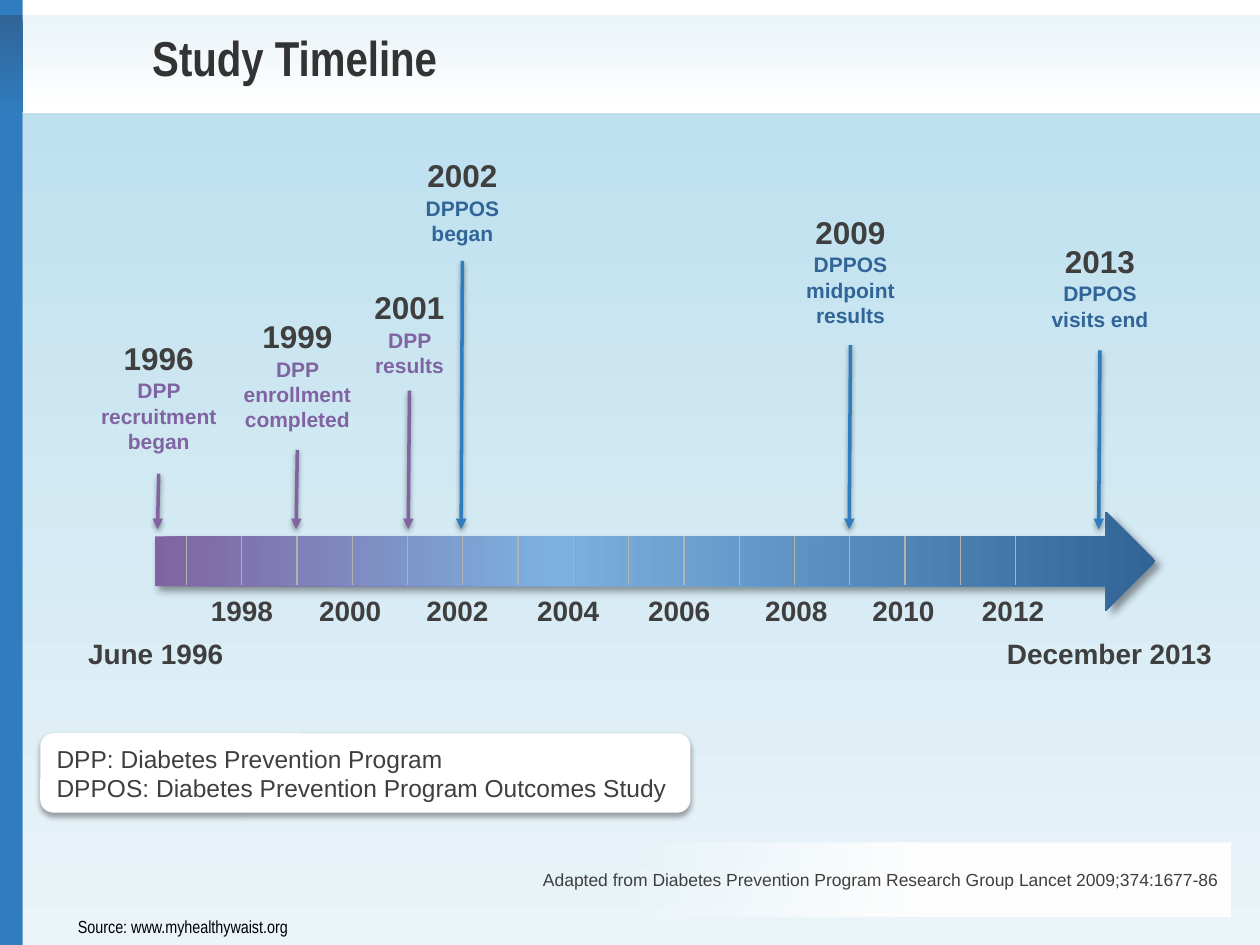
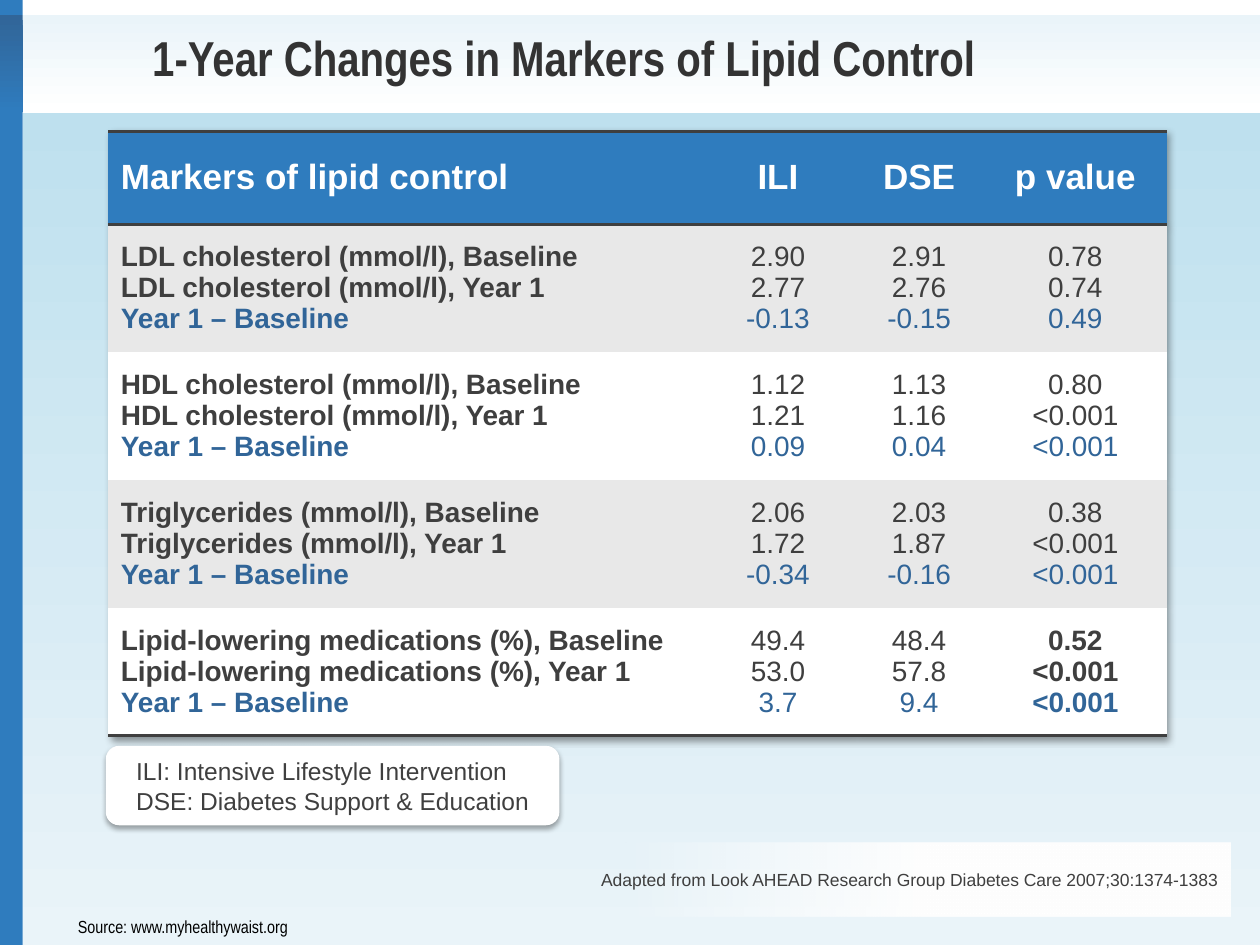
from lxml.etree import SubElement as Sub
from pptx import Presentation
from pptx.dml.color import RGBColor as RGB
from pptx.enum.shapes import MSO_CONNECTOR as LINK, MSO_SHAPE as FORM
from pptx.enum.text import MSO_ANCHOR as ANCHOR, PP_ALIGN as ALIGN
from pptx.oxml.ns import qn
from pptx.util import Inches, Pt

HUES = {
    "blue": "2F7CBE", "navy": "316598", "sky": "7CB1DF", "purple": "8064A2",
    "ice": "EAF4F9", "pale": "BEE0EE", "white": "FFFFFF", "black": "000000",
    "title": "333333", "text": "3F3F3F", "tick": "B2B2B2", "band": "E8E8E8",
}
SANS, SLIM = "Arial", "Arial Narrow"
LEFT, MID, RIGHT = ALIGN.LEFT, ALIGN.CENTER, ALIGN.RIGHT
PLAIN_STYLE = "{2D5ABB26-0587-4C30-8999-92F81FD0307C}"

# Shadows: opacity in percent, blur and distance in points, angle in degrees
BAR_SHADE = (40, 4, 3, 45)
PIN_SHADE = (38, 3.1, 1.6, 90)
KEY_SHADE = (35, 3.1, 1.8, 90)

BAR_TOP, BAR_HIGH = 4.06, 0.79
YEARS = range(1998, 2014, 2)
YEAR_LEFTS = (1.57, 2.43, 3.28, 4.16, 5.04, 5.97, 6.82, 7.69)
TICKS, TICK_FROM, TICK_TO = 16, 1.48, 8.06

# Centre, top, year, note, note width, top of the pin, note hue, pin hue
EVENTS = [
    (1.26, 2.64, "1996", "DPP recruitment began", 1.15, 3.76, "purple", "purple"),
    (2.36, 2.47, "1999", "DPP enrollment completed", 1.15, 3.57, "purple", "purple"),
    (3.25, 2.24, "2001", "DPP results", 0.85, 3.1, "purple", "purple"),
    (3.67, 1.19, "2002", "DPPOS began", 0.85, 2.07, "navy", "blue"),
    (6.75, 1.64, "2009", "DPPOS midpoint results", 0.93, 2.74, "navy", "blue"),
    (8.73, 1.87, "2013", "DPPOS visits end", 1.05, 2.78, "navy", "blue"),
]

HEADS = ("Markers of lipid control", "ILI", "DSE", "p value")
COLS = (4.71, 1.21, 1.03, 1.45)
ROWS = (0.74, 1.015, 1.015, 1.015, 1.015)
MARKERS = [
    ("LDL cholesterol (mmol/l)", ("2.90", "2.77", "-0.13"),
     ("2.91", "2.76", "-0.15"), ("0.78", "0.74", "0.49")),
    ("HDL cholesterol (mmol/l)", ("1.12", "1.21", "0.09"),
     ("1.13", "1.16", "0.04"), ("0.80", "<0.001", "<0.001")),
    ("Triglycerides (mmol/l)", ("2.06", "1.72", "-0.34"),
     ("2.03", "1.87", "-0.16"), ("0.38", "<0.001", "<0.001")),
    ("Lipid-lowering medications (%)", ("49.4", "53.0", "3.7"),
     ("48.4", "57.8", "9.4"), ("0.52", "<0.001", "<0.001")),
]


def rgb(hue):
    return RGB.from_string(HUES[hue])


def place(*sizes):
    return [Inches(size) for size in sizes]


def tint(parent, hue, alpha=100):
    """Add a colour element, see-through where alpha is below 100."""
    node = Sub(parent, qn("a:srgbClr"), val=HUES[hue])
    if alpha < 100:
        Sub(node, qn("a:alpha"), val=str(alpha * 1000))


def cast(props, shade=None):
    """Set the shadow in a shape's properties; none when shade is None."""
    effects = props.find(qn("a:effectLst"))
    if effects is None:
        effects = Sub(props, qn("a:effectLst"))
    if shade:
        alpha, blur, dist, angle = shade
        outer = Sub(effects, qn("a:outerShdw"), blurRad=str(Pt(blur)),
                    dist=str(Pt(dist)), dir=str(angle * 60000),
                    algn="tl", rotWithShape="0")
        tint(outer, "black", alpha)


def blend(shape, stops, angle):
    """Fill with a gradient of (percent, hue[, alpha]) stops."""
    props = shape._element.spPr
    grad = Sub(props, qn("a:gradFill"), rotWithShape="1")
    list_ = Sub(grad, qn("a:gsLst"))
    for spot, *paint in stops:
        tint(Sub(list_, qn("a:gs"), pos=str(spot * 1000)), *paint)
    Sub(grad, qn("a:lin"), ang=str(angle * 60000), scaled="0")
    props.find(qn("a:prstGeom")).addnext(grad)


def block(slide, spot, fill, form=FORM.RECTANGLE, angle=90, shade=None):
    """Add a shape without outline; fill is a hue or a list of stops."""
    shape = slide.shapes.add_shape(form, *place(*spot))
    if isinstance(fill, str):
        shape.fill.solid()
        shape.fill.fore_color.rgb = rgb(fill)
    else:
        blend(shape, fill, angle)
    shape.line.fill.background()
    shape.shadow.inherit = False
    cast(shape._element.spPr, shade)
    return shape


def write(frame, lines, size, hue="text", bold=False, align=LEFT, face=SANS, last=None):
    """Fill a text frame, one paragraph a line; last is the last line's hue."""
    for i, line in enumerate(lines):
        para = frame.paragraphs[0] if i == 0 else frame.add_paragraph()
        para.text = line
        para.alignment = align
        font = para.font
        font.name, font.size, font.bold = face, Pt(size), bold
        font.color.rgb = rgb(last if last and i == len(lines) - 1 else hue)


def label(slide, spot, text, size, wrap=True, anchor=ANCHOR.TOP, **look):
    frame = slide.shapes.add_textbox(*place(*spot)).text_frame
    frame.word_wrap = wrap
    frame.vertical_anchor = anchor
    write(frame, [text], size, **look)


def rule(slide, start, end, hue, width, arrow=False, shade=None):
    link = slide.shapes.add_connector(LINK.STRAIGHT, *place(*start, *end))
    link.line.color.rgb = rgb(hue)
    link.line.width = Pt(width)
    if arrow:
        Sub(link.line._get_or_add_ln(), qn("a:tailEnd"), type="triangle")
    cast(link._element.spPr, shade)


def key(slide, spot, lines, inset=0.1):
    """Add the rounded box that explains the short names."""
    box = block(slide, spot, "white", FORM.ROUNDED_RECTANGLE, shade=KEY_SHADE)
    frame = box.text_frame
    frame.word_wrap = True
    frame.margin_left = Inches(inset)
    frame.vertical_anchor = ANCHOR.MIDDLE
    write(frame, lines, 14)


def start(deck, title, credit):
    """Add a slide with the bands, title, credit and source line."""
    slide = deck.slides.add_slide(deck.slide_layouts[6])
    block(slide, (0, 0, 0.18, 7.5), "blue")
    block(slide, (0, 0.12, 10, 0.77), [(0, "ice"), (100, "white")])
    block(slide, (0, 0.12, 0.18, 0.77), [(0, "navy"), (100, "blue")])
    block(slide, (0.18, 0.9, 9.82, 6.6), [(0, "pale"), (100, "ice")])
    label(slide, (0.52, 7.22, 1.89, 0.27), "Source: www.myhealthywaist.org", 10,
          wrap=False, hue="black", face=SLIM)
    block(slide, (4.96, 6.69, 4.81, 0.58),
          [(0, "white", 0), (50, "white"), (100, "white")], angle=0)
    label(slide, (1.11, 0.17, 8.41, 0.57), title, 28, anchor=ANCHOR.MIDDLE,
          hue="title", bold=True, face=SLIM)
    label(slide, (2.32, 6.68, 7.44, 0.6), credit, 10, anchor=ANCHOR.MIDDLE, align=RIGHT)
    return slide


def event(slide, x, top, year, note, width, pin, hue, line):
    label(slide, (x - width / 2, top + 0.31, width, 0.71), note, 12,
          hue=hue, bold=True, align=MID)
    label(slide, (x - 0.38, top, 0.76, 0.4), year, 18, bold=True, align=MID)
    rule(slide, (x, pin), (x - 0.01, 4.2), line, 2, arrow=True, shade=PIN_SHADE)


def axis(slide):
    """Add the time arrow with its ticks and dates."""
    block(slide, (1.23, BAR_TOP, 7.94, BAR_HIGH),
          [(0, "purple"), (40, "sky"), (100, "navy")],
          FORM.RIGHT_ARROW, angle=0, shade=BAR_SHADE)
    dates = [(0.59, 5, 1.29, "June 1996"), (7.88, 5, 1.85, "December 2013")]
    dates += [(x, 4.66, 0.7, str(year)) for x, year in zip(YEAR_LEFTS, YEARS)]
    for x, y, width, text in dates:
        label(slide, (x, y, width, 0.37), text, 16, wrap=False, bold=True, align=MID)
    step = (TICK_TO - TICK_FROM) / (TICKS - 1)
    for i in range(TICKS):
        x = TICK_FROM + i * step
        rule(slide, (x, 4.64), (x, 4.25), "tick", 0.75)


def edge(cell, side):
    line = Sub(cell._tc.get_or_add_tcPr(), qn(f"a:ln{side}"), w=str(Pt(2)))
    tint(Sub(line, qn("a:solidFill")), "text")
    cell._tc.tcPr.insert(0, line)


def paint(cell, hue, sides=""):
    """Fill a cell and rule the sides named, in the order B, T."""
    cell.vertical_anchor = ANCHOR.MIDDLE
    cell.fill.solid()
    cell.fill.fore_color.rgb = rgb(hue)
    for side in sides:
        edge(cell, side)


def grid(slide):
    """Add the table of lipid markers."""
    table = slide.shapes.add_table(len(ROWS), len(COLS),
                                   *place(0.86, 1.04, sum(COLS), sum(ROWS))).table
    table.horz_banding = False
    props = table._tbl.tblPr
    props.find(qn("a:tableStyleId")).text = PLAIN_STYLE
    cast(props, BAR_SHADE)
    props.insert(0, props.find(qn("a:effectLst")))
    for col, width in zip(table.columns, COLS):
        col.width = Inches(width)
    for row, height in zip(table.rows, ROWS):
        row.height = Inches(height)
    for c, head in enumerate(HEADS):
        cell = table.cell(0, c)
        paint(cell, "blue", "BT")
        write(cell.text_frame, [head], 20, "white", True, MID if c else LEFT)
    for r, (name, *values) in enumerate(MARKERS, 1):
        end = r == len(MARKERS)
        names = (f"{name}, Baseline", f"{name}, Year 1", "Year 1 – Baseline")
        for c, lines in enumerate([names, *values]):
            cell = table.cell(r, c)
            paint(cell, "band" if r % 2 else "white", "B" if end else "")
            bold = c == 0 or (end and c == len(values))
            write(cell.text_frame, lines, 16, bold=bold,
                  align=MID if c else LEFT, last="navy")


def main():
    deck = Presentation()
    deck.slide_width, deck.slide_height = place(10, 7.5)

    slide = start(deck, "Study Timeline", "Adapted from Diabetes Prevention Program "
                  "Research Group Lancet 2009;374:1677-86")
    axis(slide)
    for item in EVENTS:
        event(slide, *item)
    key(slide, (0.32, 5.82, 5.16, 0.63),
        ["DPP: Diabetes Prevention Program",
         "DPPOS: Diabetes Prevention Program Outcomes Study"])

    slide = start(deck, "1-Year Changes in Markers of Lipid Control",
                  "Adapted from Look AHEAD Research Group Diabetes Care 2007;30:1374-1383")
    grid(slide)
    key(slide, (0.84, 5.92, 3.6, 0.63),
        ["ILI: Intensive Lifestyle Intervention",
         "DSE: Diabetes Support & Education"], inset=0.21)

    deck.save("out.pptx")


if __name__ == "__main__":
    main()
